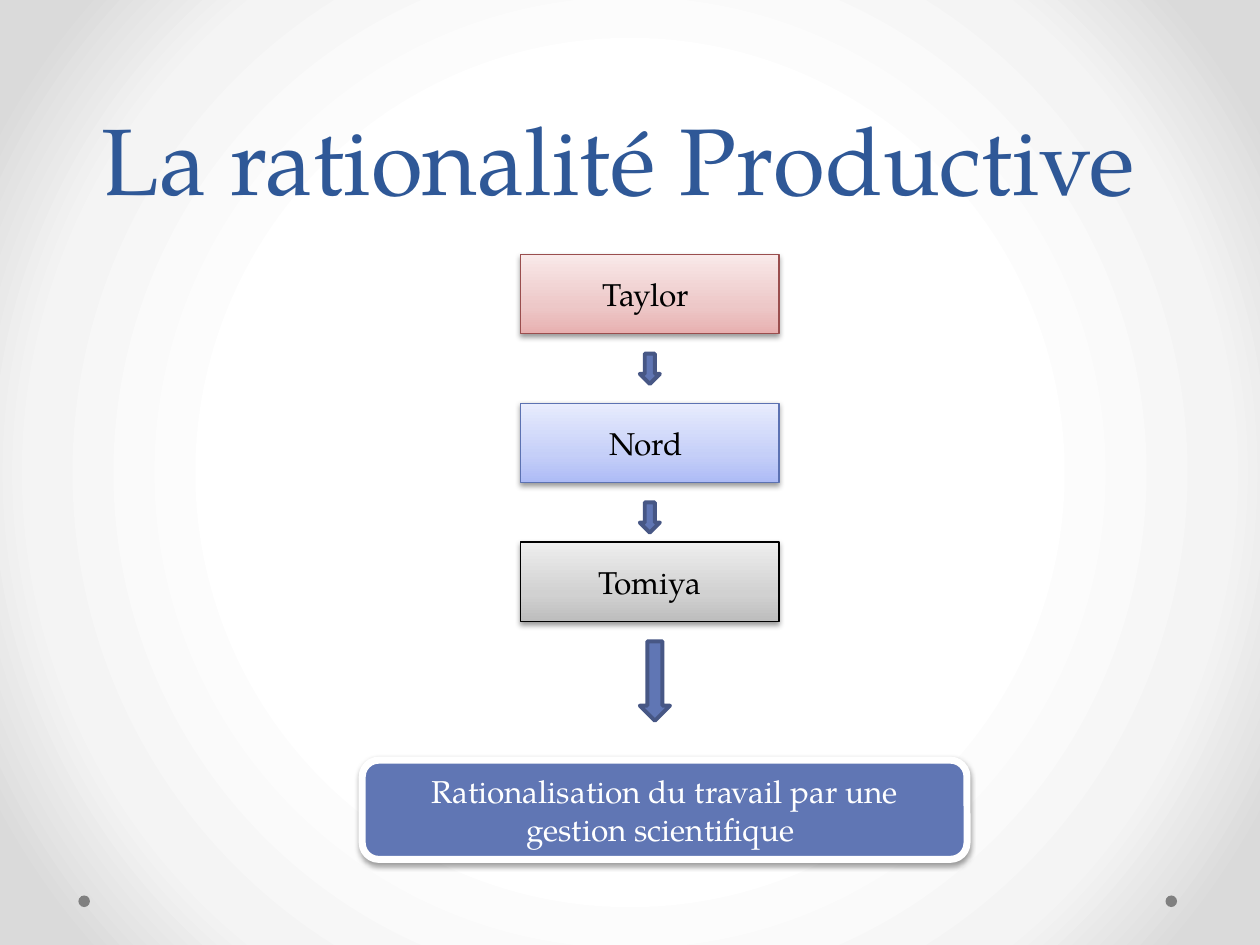
from lxml import etree
from pptx import Presentation
from pptx.dml.color import RGBColor
from pptx.enum.shapes import MSO_SHAPE
from pptx.enum.text import MSO_ANCHOR, MSO_AUTO_SIZE, PP_ALIGN
from pptx.oxml.ns import qn
from pptx.util import Pt

RECTANGLE = MSO_SHAPE.RECTANGLE
ROUNDED = MSO_SHAPE.ROUNDED_RECTANGLE
DOWN_ARROW = MSO_SHAPE.DOWN_ARROW
OVAL = MSO_SHAPE.OVAL
MIDDLE = MSO_ANCHOR.MIDDLE
BOTTOM = MSO_ANCHOR.BOTTOM
CENTER = PP_ALIGN.CENTER
NO_AUTOFIT = MSO_AUTO_SIZE.NONE

TITLE_ONLY = 5
BOX_LEFT, BOX_WIDTH, BOX_HEIGHT = 297.5, 147.6, 45.4
ARROW_LEFT, ARROW_GAP = 365.6, 11.3


def color(hex_string):
    return RGBColor.from_string(hex_string)


def add_color(parent, hex_string):
    return etree.SubElement(parent, qn("a:srgbClr"), val=hex_string)


def set_stops(gradient, stops):
    stop_list = gradient.find(qn("a:gsLst"))
    for stop in list(stop_list):
        stop_list.remove(stop)
    for position, hex_string in stops:
        stop = etree.SubElement(stop_list, qn("a:gs"), pos=str(position * 1000))
        add_color(stop, hex_string)


class SlideBuilder:
    font = "TeX Gyre Pagella"
    text_size = 18
    accent = "6076B4"
    accent_dark = "475785"

    def __init__(self, slide):
        self.slide = slide

    def background(self, stops):
        self.slide.background.fill.gradient()
        gradient = self.slide._element.find(".//" + qn("a:gradFill"))
        set_stops(gradient, stops)
        gradient.remove(gradient.find(qn("a:lin")))
        circle = etree.SubElement(gradient, qn("a:path"), {"path": "circle"})
        etree.SubElement(circle, qn("a:fillToRect"), l="50000", t="50000", r="50000", b="50000")

    def add_text(self, shape, text, size, hex_string, anchor):
        frame = shape.text_frame
        frame.word_wrap = True
        frame.vertical_anchor = anchor
        paragraph = frame.paragraphs[0]
        paragraph.alignment = CENTER
        run = paragraph.add_run()
        run.text = text
        run.font.name = self.font
        run.font.size = Pt(size)
        run.font.color.rgb = color(hex_string)
        return paragraph

    def title(self, text):
        shape = self.slide.shapes.title
        shape.left, shape.top, shape.width, shape.height = Pt(36), Pt(0), Pt(648), Pt(126)
        paragraph = self.add_text(shape, text, 54, "2F5897", BOTTOM)
        paragraph.line_spacing = Pt(58)
        shape.text_frame.auto_size = NO_AUTOFIT

    def shape(self, kind, left, top, width, height, fill, line=None, line_width=0):
        shape = self.slide.shapes.add_shape(kind, Pt(left), Pt(top), Pt(width), Pt(height))
        shape.shadow.inherit = False
        shape.fill.solid()
        shape.fill.fore_color.rgb = color(fill)
        if line:
            shape.line.color.rgb = color(line)
            shape.line.width = Pt(line_width)
        else:
            shape.line.fill.background()
        return shape

    def shadow(self, shape):
        effects = shape._element.spPr.find(qn("a:effectLst"))
        shadow = etree.SubElement(
            effects, qn("a:outerShdw"), blurRad=str(Pt(3.1)), dist=str(Pt(1.6)),
            dir="5400000", rotWithShape="0")
        etree.SubElement(add_color(shadow, "000000"), qn("a:alpha"), val="38000")

    def box(self, top, text, line, stops):
        shape = self.shape(RECTANGLE, BOX_LEFT, top, BOX_WIDTH, BOX_HEIGHT, stops[0], line, 0.75)
        shape.fill.gradient()
        shape.fill.gradient_angle = 90
        set_stops(shape._element.spPr.find(qn("a:gradFill")), zip((0, 35, 100), stops))
        self.shadow(shape)
        self.add_text(shape, text, self.text_size, "000000", MIDDLE)

    def arrow(self, top, width, height):
        self.shape(DOWN_ARROW, ARROW_LEFT, top, width, height, self.accent, self.accent_dark, 2.25)

    def conclusion(self, text):
        shape = self.shape(ROUNDED, 207, 434.4, 345.6, 56.7, self.accent, "FFFFFF", 4)
        self.shadow(shape)
        self.add_text(shape, text, self.text_size, "FFFFFF", MIDDLE)

    def dot(self, left):
        self.shape(OVAL, left, 511.7, 6.6, 6.6, "808080")


def main():
    presentation = Presentation()
    presentation.slide_width, presentation.slide_height = Pt(720), Pt(540)
    layout = presentation.slide_layouts[TITLE_ONLY]
    builder = SlideBuilder(presentation.slides.add_slide(layout))

    builder.background([(50, "FFFFFF"), (76, "F4F4F4"), (92, "DADADA")])
    for left in (666, 44.8):
        builder.dot(left)
    builder.title("La rationalité Productive ")

    small_arrow, large_arrow = (11.5, 17.3), (17.3, 45.4)
    steps = [
        (145.4, "Taylor ", "9A4E4E", ("E8B0B0", "EDC8C8", "F9E9E9"), small_arrow),
        (230.4, "Nord ", "5C72B2", ("ADBBF6", "C5CFF8", "E8ECFD"), small_arrow),
        (309.8, "Tomiya", "000000", ("BDBDBD", "D1D1D1", "EEEEEE"), large_arrow),
    ]
    for top, text, line, stops, arrow_size in steps:
        builder.box(top, text, line, stops)
        builder.arrow(top + BOX_HEIGHT + ARROW_GAP, *arrow_size)
    builder.conclusion("Rationalisation du travail par une gestion scientifique ")

    presentation.save("out.pptx")


if __name__ == "__main__":
    main()
